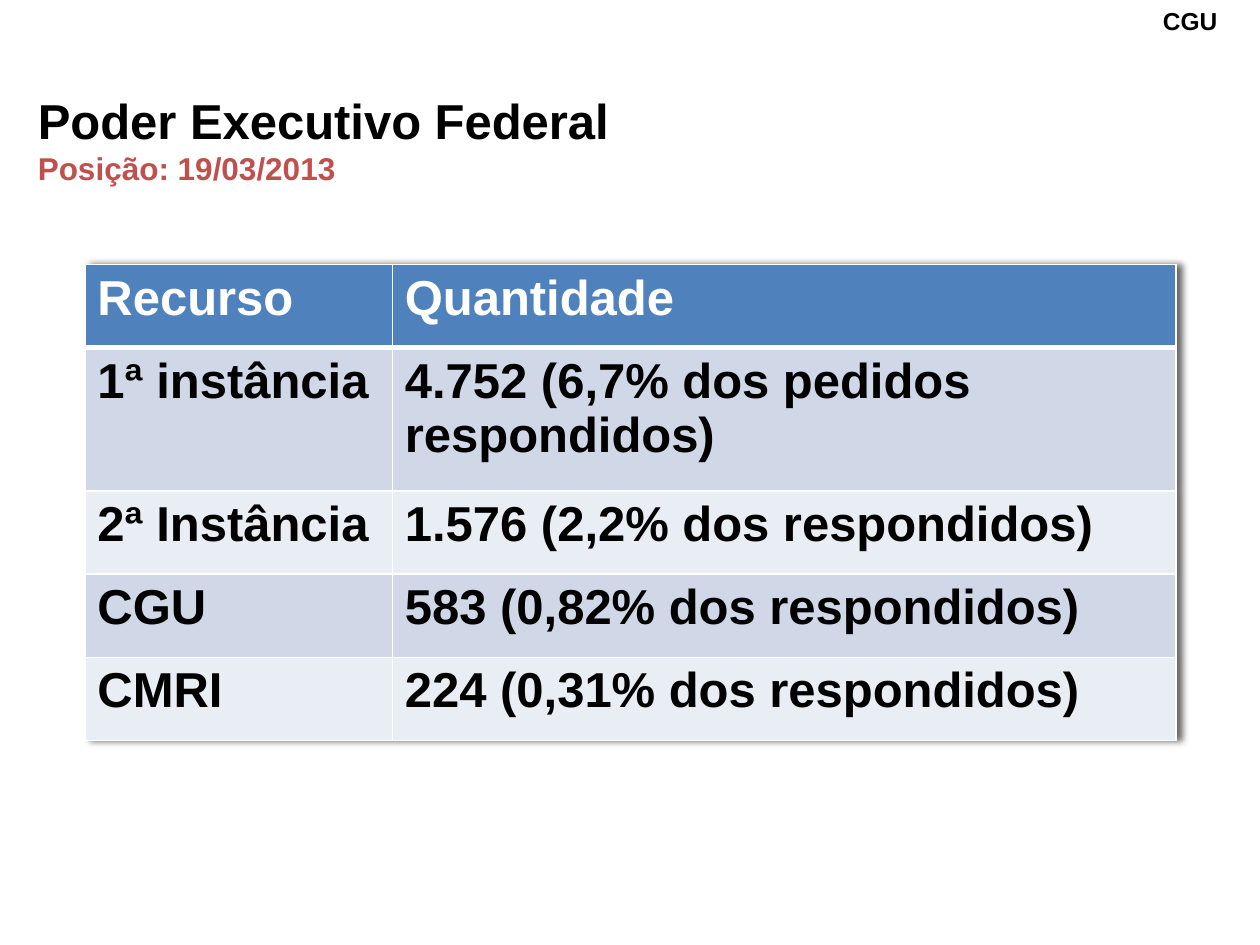
from lxml.etree import SubElement
from pptx import Presentation
from pptx.dml.color import RGBColor
from pptx.enum.text import MSO_ANCHOR, MSO_AUTO_SIZE, PP_ALIGN
from pptx.oxml import parse_xml
from pptx.oxml.ns import nsdecls, qn
from pptx.util import Pt

BLACK = RGBColor(0x00, 0x00, 0x00)
WHITE = RGBColor(0xFF, 0xFF, 0xFF)
RED = RGBColor(0xC0, 0x50, 0x4D)
HEADER_BLUE = RGBColor(0x4F, 0x81, 0xBD)
BANDS = (RGBColor(0xE9, 0xED, 0xF4), RGBColor(0xD0, 0xD8, 0xE8))

APPEALS = [
    ("Recurso", "Quantidade"),
    ("1ª instância", "4.752 (6,7% dos pedidos respondidos)"),
    ("2ª Instância", "1.576 (2,2% dos respondidos)"),
    ("CGU", "583 (0,82% dos respondidos)"),
    ("CMRI", "224 (0,31% dos respondidos)"),
]
COLUMN_WIDTHS = (175.7, 447.8)
ROW_HEIGHTS = (47.5, 82, 47.5, 47.5, 47.5)


class SlideBuilder:
    font_name = "Arial"

    def __init__(self, slide):
        self.slide = slide

    def add_text(self, paragraph, text, size, color):
        run = paragraph.add_run()
        run.text = text
        run.font.name = self.font_name
        run.font.size = Pt(size)
        run.font.bold = True
        run.font.color.rgb = color

    def title(self, left, top, width, height, lines):
        heading = self.slide.shapes.title
        heading.left, heading.top = Pt(left), Pt(top)
        heading.width, heading.height = Pt(width), Pt(height)
        frame = heading.text_frame
        frame.word_wrap = True
        frame.auto_size = MSO_AUTO_SIZE.NONE
        frame.vertical_anchor = MSO_ANCHOR.TOP
        for index, (text, size, color) in enumerate(lines):
            paragraph = frame.add_paragraph() if index else frame.paragraphs[0]
            paragraph.alignment = PP_ALIGN.LEFT
            self.add_text(paragraph, text, size, color)

    def label(self, left, top, width, height, text, size):
        box = self.slide.shapes.add_textbox(Pt(left), Pt(top), Pt(width), Pt(height))
        box.text_frame.word_wrap = True
        self.add_text(box.text_frame.paragraphs[0], text, size, BLACK)

    def borders(self, cell, bottom_width):
        properties = cell._tc.get_or_add_tcPr()
        widths = {"a:lnL": 1, "a:lnR": 1, "a:lnT": 1, "a:lnB": bottom_width}
        for side, width in widths.items():
            line = SubElement(properties, qn(side), w=str(Pt(width)))
            fill = SubElement(line, qn("a:solidFill"))
            SubElement(fill, qn("a:srgbClr"), val=str(WHITE))

    def table(self, left, top, rows, widths, heights, size):
        frame = self.slide.shapes.add_table(
            len(rows), len(widths), Pt(left), Pt(top), Pt(sum(widths)), Pt(sum(heights)))
        table = frame.table
        for column, width in zip(table.columns, widths):
            column.width = Pt(width)
        for r, (values, height) in enumerate(zip(rows, heights)):
            table.rows[r].height = Pt(height)
            for c, text in enumerate(values):
                cell = table.cell(r, c)
                self.borders(cell, 1 if r else 3)
                cell.fill.solid()
                cell.fill.fore_color.rgb = BANDS[r % 2] if r else HEADER_BLUE
                self.add_text(cell.text_frame.paragraphs[0], text, size, BLACK if r else WHITE)
        return table

    def table_shadow(self, table):
        table._tbl.tblPr.insert(0, parse_xml(
            f'<a:effectLst {nsdecls("a")}>'
            f'<a:outerShdw blurRad="{Pt(4)}" dist="{Pt(3)}" algn="l" rotWithShape="0">'
            '<a:srgbClr val="000000"><a:alpha val="60000"/></a:srgbClr>'
            '</a:outerShdw></a:effectLst>'))


def main():
    presentation = Presentation()
    presentation.slide_width, presentation.slide_height = Pt(720), Pt(540)
    title_only = presentation.slide_layouts[5]
    builder = SlideBuilder(presentation.slides.add_slide(title_only))

    # Agency mark in the corner
    builder.label(657.4, 0, 62.6, 24.5, "CGU", 14)

    # Appeals by instance
    appeals = builder.table(48.5, 151.2, APPEALS, COLUMN_WIDTHS, ROW_HEIGHTS, 28)
    appeals.cell(1, 1).text_frame.paragraphs[0].space_after = Pt(12)
    builder.table_shadow(appeals)

    # Title with the reference date
    builder.title(14.4, 48.2, 687.6, 65.5, [
        ("Poder Executivo Federal", 28, BLACK),
        ("Posição: 19/03/2013", 18, RED),
    ])

    presentation.save("out.pptx")


if __name__ == "__main__":
    main()
